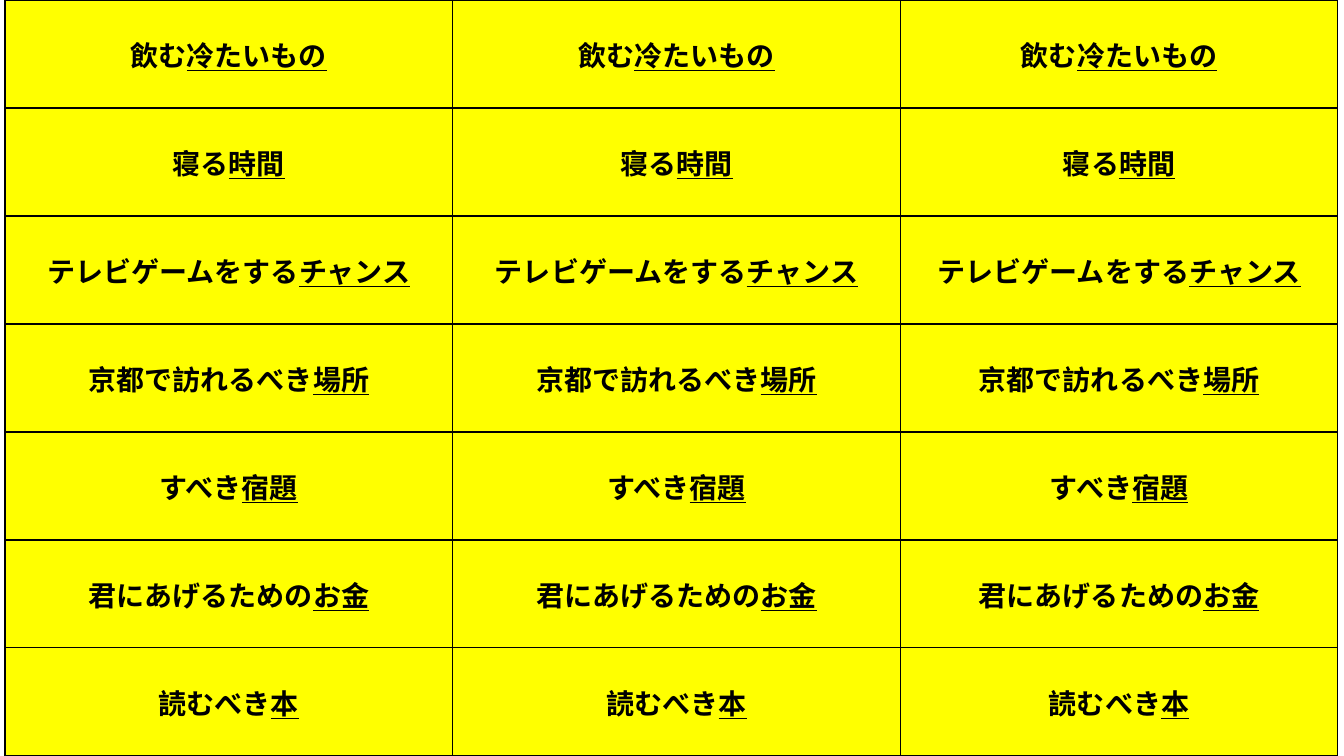
from lxml import etree
from pptx import Presentation
from pptx.dml.color import RGBColor
from pptx.enum.text import MSO_ANCHOR, PP_ALIGN
from pptx.oxml.ns import qn
from pptx.util import Inches, Pt

CENTER = PP_ALIGN.CENTER
MIDDLE = MSO_ANCHOR.MIDDLE
YELLOW = RGBColor(0xFF, 0xFF, 0x00)
BLACK = RGBColor(0x00, 0x00, 0x00)
FONT = "Noto Sans CJK JP"

# Each phrase: modifier, then the underlined noun
PHRASES = [
    ("飲む", "冷たいもの"),
    ("寝る", "時間"),
    ("テレビゲームをする", "チャンス"),
    ("京都で訪れるべき", "場所"),
    ("すべき", "宿題"),
    ("君にあげるための", "お金"),
    ("読むべき", "本"),
]
COLUMN_WIDTHS = [4.44, 4.44, 4.34]


def add_run(paragraph, text, underline):
    run = paragraph.add_run()
    run.text = text
    run.font.size = Pt(20)
    run.font.bold = True
    run.font.underline = underline
    run.font.color.rgb = BLACK
    run.font.name = FONT
    east_asian = etree.SubElement(run.font._element, qn("a:ea"))
    east_asian.set("typeface", FONT)


def add_borders(cell):
    properties = cell._tc.get_or_add_tcPr()
    for position, side in enumerate(("a:lnL", "a:lnR", "a:lnT", "a:lnB")):
        line = etree.Element(qn(side), w=str(Pt(1)))
        fill = etree.SubElement(line, qn("a:solidFill"))
        etree.SubElement(fill, qn("a:srgbClr"), val=str(BLACK))
        properties.insert(position, line)


prs = Presentation()
prs.slide_width = Inches(13.33)
prs.slide_height = Inches(7.5)
slide = prs.slides.add_slide(prs.slide_layouts[6])

# Card grid: one phrase per row, repeated in every column
cards = slide.shapes.add_table(
    len(PHRASES), len(COLUMN_WIDTHS),
    Inches(0.05), 0, Inches(sum(COLUMN_WIDTHS)), prs.slide_height,
).table
cards.first_row = False
cards.horz_banding = False
for column, width in zip(cards.columns, COLUMN_WIDTHS):
    column.width = Inches(width)

# Card contents
for row, (modifier, noun) in zip(cards.rows, PHRASES):
    row.height = prs.slide_height // len(PHRASES)
    for card in row.cells:
        card.fill.solid()
        card.fill.fore_color.rgb = YELLOW
        card.vertical_anchor = MIDDLE
        add_borders(card)
        phrase = card.text_frame.paragraphs[0]
        phrase.alignment = CENTER
        add_run(phrase, modifier, False)
        add_run(phrase, noun, True)

prs.save("out.pptx")
